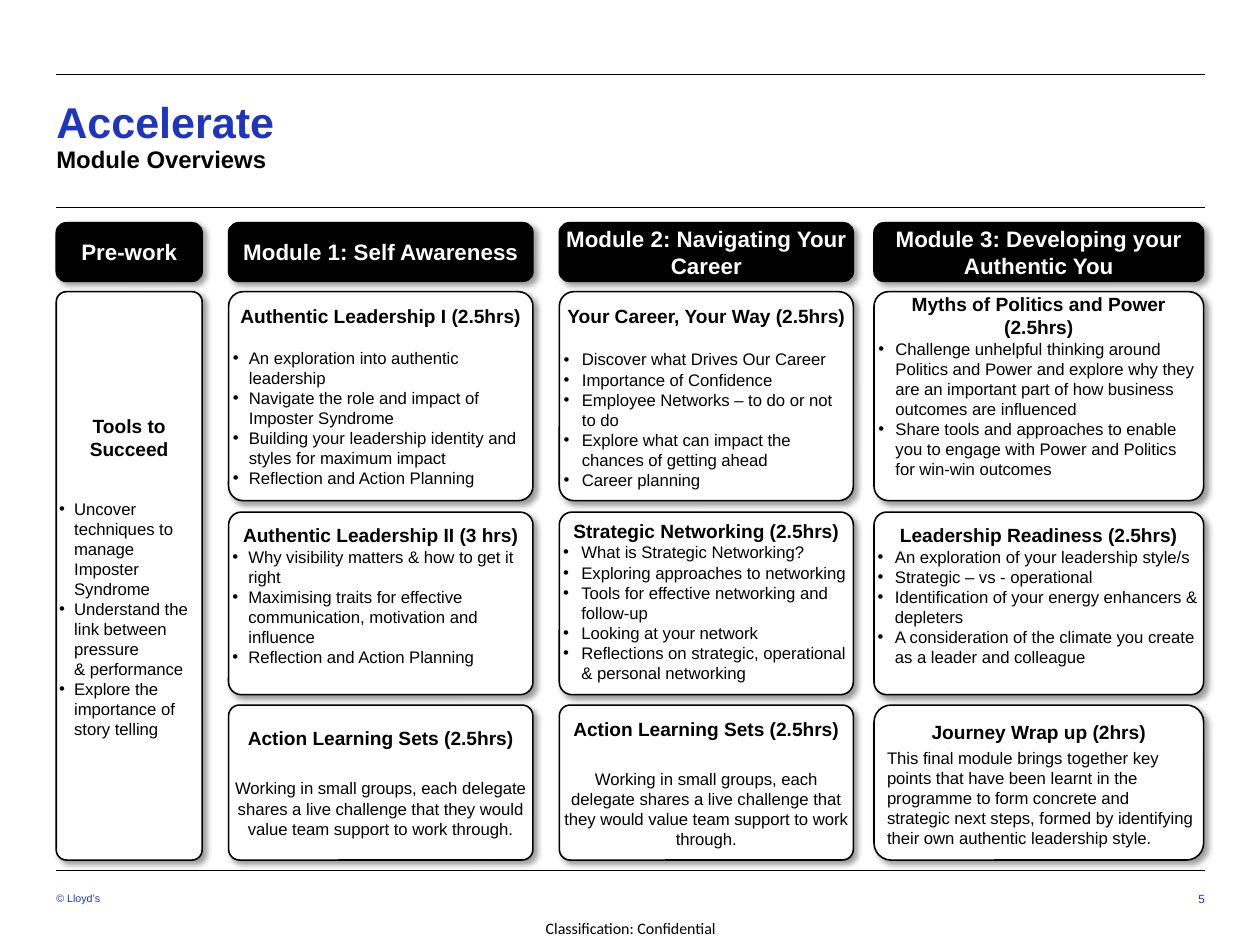
import pptx
import pptx.dml.color
import pptx.enum.shapes
import pptx.enum.text
import pptx.util
from lxml import etree
from pptx.oxml import parse_xml
from pptx.oxml.ns import nsdecls, qn

ALIGN = pptx.enum.text.PP_ALIGN
ANCHOR = pptx.enum.text.MSO_ANCHOR
BLACK, WHITE, BLUE = "000000", "FFFFFF", "1E35BF"
NO_BREAK_SPACE = chr(160)
LEFT, WIDTH = 49, 1000

# left, width, bullet indent
COLUMNS = [(49, 127, 13), (199, 265, 14), (487, 256, 16), (761, 287, 15)]
# top, height
ROWS = [(194, 51), (254, 182), (446, 159), (614, 135)]
HEADERS = ["Pre-work", "Module 1: Self Awareness", "Module 2: Navigating Your Career",
           "Module 3: Developing your Authentic You"]

ACTION_LEARNING = ("Working in small groups, each delegate shares a live challenge "
                   "that they would value team support to work through.")
WRAP_UP = ("This final module brings together key points that have been learnt in the "
           "programme to form concrete and strategic next steps, formed by identifying "
           "their own authentic leadership style.")

# column, first row, last row, top inset in px, heading, gap in points, bullets
BULLET_CARDS = [
    (0, 1, 3, 104, "Tools to Succeed", 24, [
        "Uncover techniques to manage Imposter Syndrome",
        f"Understand the link between pressure &{NO_BREAK_SPACE}performance",
        "Explore the importance of story telling"]),
    (1, 1, 1, 7, "Authentic Leadership I (2.5hrs)", 13, [
        "An exploration into authentic leadership",
        "Navigate the role and impact of Imposter Syndrome",
        "Building your leadership identity and styles for maximum impact",
        "Reflection and Action Planning"]),
    (1, 2, 2, 7, "Authentic Leadership II (3 hrs)", 0, [
        "Why visibility matters & how to get it right",
        "Maximising traits for effective communication, motivation and influence",
        "Reflection and Action Planning"]),
    (2, 1, 1, 7, "Your Career, Your Way (2.5hrs)", 14, [
        "Discover what Drives Our Career",
        "Importance of Confidence",
        "Employee Networks – to do or not to do",
        "Explore what can impact the chances of getting ahead",
        "Career planning"]),
    (2, 2, 2, 3, "Strategic Networking (2.5hrs)", 0, [
        "What is Strategic Networking?",
        "Exploring approaches to networking",
        "Tools for effective networking and follow-up",
        "Looking at your network",
        "Reflections on strategic, operational & personal networking"]),
    (3, 1, 1, -3, "Myths of Politics and Power (2.5hrs)", 0, [
        "Challenge unhelpful thinking around Politics and Power and explore why "
        "they are an important part of how business outcomes are influenced",
        "Share tools and approaches to enable you to engage with Power and "
        "Politics for win-win outcomes"]),
    (3, 2, 2, 7, "Leadership Readiness (2.5hrs)", 0, [
        "An exploration of your leadership style/s",
        "Strategic – vs - operational",
        "Identification of your energy enhancers & depleters",
        "A consideration of the climate you create as a leader and colleague"]),
]


def px(value):
    """One px is a hundredth of an inch."""
    return pptx.util.Emu(value * 9144)


def color(hex_string):
    return pptx.dml.color.RGBColor.from_string(hex_string)


def format_paragraph(paragraph, size, hex_string, bold=False, align=ALIGN.LEFT, font="Arial"):
    paragraph.alignment = align
    for run in paragraph.runs:
        run.font.name = font
        run.font.size = pptx.util.Pt(size)
        run.font.bold = bold
        run.font.color.rgb = color(hex_string)


def set_insets(text_frame, top=0, bottom=0):
    text_frame.margin_left = text_frame.margin_right = 0
    text_frame.margin_top, text_frame.margin_bottom = px(top), px(bottom)
    text_frame.word_wrap = True


def set_indent(paragraph, left, right=0, hanging=False):
    properties = paragraph._p.get_or_add_pPr()
    properties.set("marL", str(px(left)))
    properties.set("marR", str(px(right)))
    properties.set("indent", str(-px(left) if hanging else 0))
    return properties


def add_bullet(paragraph, indent):
    properties = set_indent(paragraph, indent, hanging=True)
    etree.SubElement(properties, qn("a:buFont")).set("typeface", "Arial")
    etree.SubElement(properties, qn("a:buChar")).set("char", "•")


def add_title(slide):
    title = slide.shapes.title
    title.left, title.top, title.width, title.height = px(LEFT), px(65), px(WIDTH), px(117)
    text_frame = title.text_frame
    set_insets(text_frame, 23, 8)
    text_frame.auto_size = pptx.enum.text.MSO_AUTO_SIZE.NONE
    text_frame.vertical_anchor = ANCHOR.TOP
    text_frame.text = "Accelerate\nModule Overviews"
    for paragraph, size, hex_string in zip(text_frame.paragraphs, (27, 15), (BLUE, BLACK)):
        format_paragraph(paragraph, size, hex_string, bold=True)
        paragraph.line_spacing = 0.9
        paragraph.space_before = pptx.util.Pt(0)


def add_rule(slide, y):
    rule = slide.shapes.add_connector(pptx.enum.shapes.MSO_CONNECTOR.STRAIGHT,
                                      px(LEFT), px(y), px(LEFT + WIDTH), px(y))
    rule.line.color.rgb = color(BLACK)
    rule.line.width = pptx.util.Pt(0.5)
    etree.SubElement(rule._element.spPr, qn("a:effectLst"))


def add_label(slide, box, text, size, hex_string, align=ALIGN.LEFT, font="Arial"):
    label = slide.shapes.add_textbox(*map(px, box))
    set_insets(label.text_frame)
    label.text_frame.vertical_anchor = ANCHOR.MIDDLE
    label.text_frame.text = text
    format_paragraph(label.text_frame.paragraphs[0], size, hex_string, align=align, font=font)


def add_panel(slide, column, first_row, last_row, fill, corner):
    """Add a rounded, shadowed box over the given grid cells."""
    left, width, _ = COLUMNS[column]
    top = ROWS[first_row][0]
    height = sum(ROWS[last_row]) - top
    panel = slide.shapes.add_shape(pptx.enum.shapes.MSO_SHAPE.ROUNDED_RECTANGLE,
                                   px(left), px(top), px(width), px(height))
    panel.adjustments[0] = corner
    panel.fill.solid()
    panel.fill.fore_color.rgb = color(fill)
    panel.line.color.rgb = color(BLACK)
    panel.line.width = pptx.util.Pt(1)
    panel._element.spPr.append(parse_xml(
        f'<a:effectLst {nsdecls("a")}><a:outerShdw blurRad="50800" dist="38100" '
        'dir="2700000" algn="tl" rotWithShape="0"><a:srgbClr val="000000">'
        '<a:alpha val="40000"/></a:srgbClr></a:outerShdw></a:effectLst>'))
    set_insets(panel.text_frame)
    return panel


def add_header(slide, column, text):
    text_frame = add_panel(slide, column, 0, 0, BLACK, 0.17).text_frame
    text_frame.vertical_anchor = ANCHOR.MIDDLE
    text_frame.text = text
    format_paragraph(text_frame.paragraphs[0], 14, WHITE, bold=True, align=ALIGN.CENTER)


def add_card(slide, column, first_row, last_row, top, heading, gap, body, corner=0.07):
    """Add a white card and return its body paragraphs."""
    text_frame = add_panel(slide, column, first_row, last_row, WHITE, corner).text_frame
    set_insets(text_frame, top)
    text_frame.vertical_anchor = ANCHOR.TOP
    text_frame.text = "\n".join([heading, *body])
    title, *paragraphs = text_frame.paragraphs
    format_paragraph(title, 12, BLACK, bold=True, align=ALIGN.CENTER)
    title.space_after = pptx.util.Pt(gap)
    for paragraph in paragraphs:
        format_paragraph(paragraph, 10.5, BLACK)
    return paragraphs


def main():
    presentation = pptx.Presentation()
    presentation.slide_width, presentation.slide_height = px(1097), px(823)
    slide = presentation.slides.add_slide(presentation.slide_layouts[5])

    for y in (65, 181, 758):
        add_rule(slide, y)
    add_title(slide)
    for column, text in enumerate(HEADERS):
        add_header(slide, column, text)

    for card in BULLET_CARDS:
        for paragraph in add_card(slide, *card):
            add_bullet(paragraph, COLUMNS[card[0]][2])
    for column, top in ((1, 16), (2, 8)):
        for paragraph in add_card(slide, column, 3, 3, top, "Action Learning Sets (2.5hrs)",
                                  18, [ACTION_LEARNING]):
            paragraph.alignment = ALIGN.CENTER
    for paragraph in add_card(slide, 3, 3, 3, 9, "Journey Wrap up (2hrs)", 2.5,
                              [WRAP_UP], corner=0.11):
        set_indent(paragraph, 7, right=4)

    add_label(slide, (LEFT, 772, 370, 21), "© Lloyd’s", 6.7, BLUE)
    add_label(slide, (802, 768, 247, 30), "5", 7.4, BLUE, ALIGN.RIGHT)
    add_label(slide, (458, 794, 182, 29), "Classification: Confidential", 10, BLACK,
              ALIGN.CENTER, "Calibri")
    presentation.save("out.pptx")


if __name__ == "__main__":
    main()
